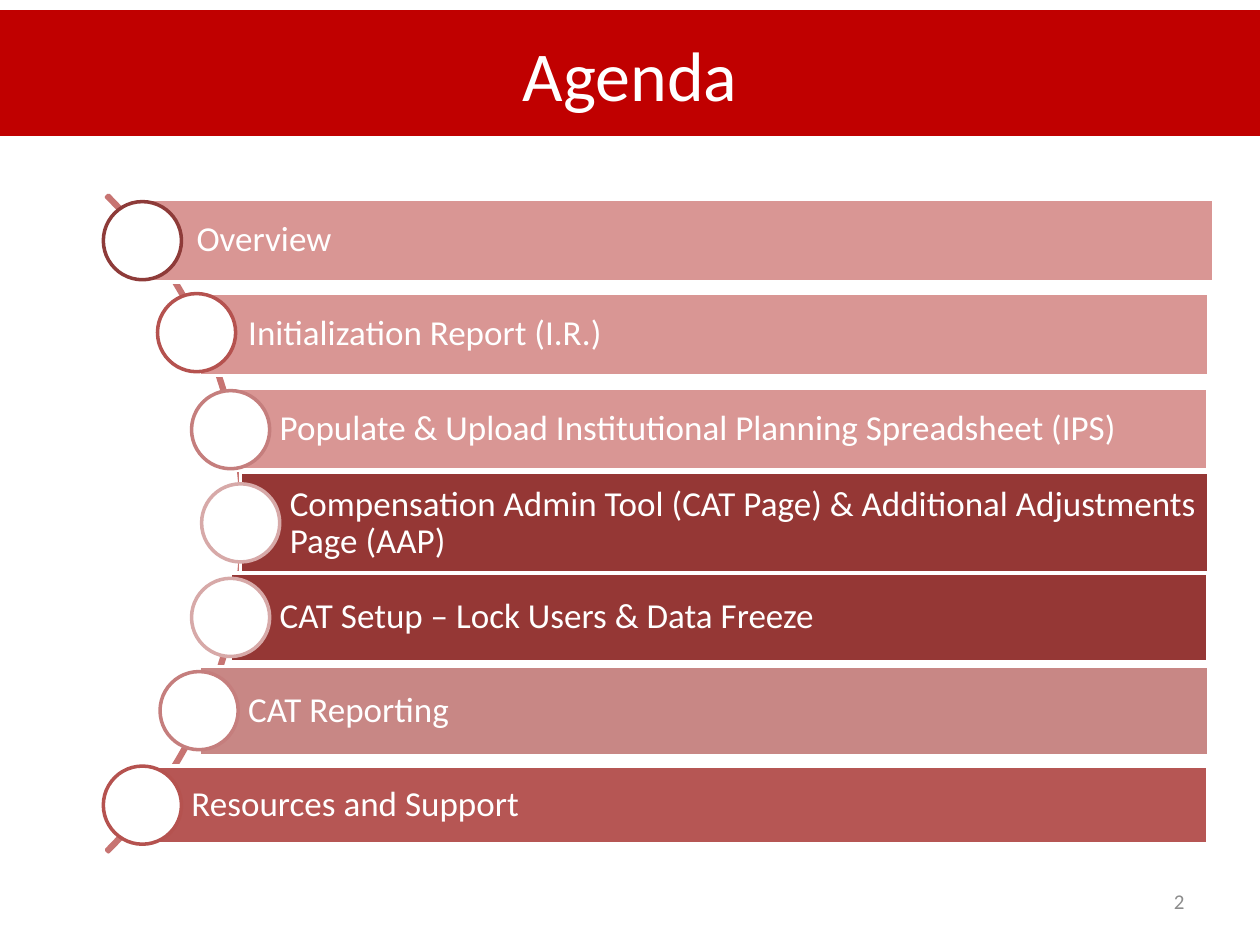
from pptx import Presentation, util as u
from pptx.dml.color import RGBColor
from pptx.enum import shapes, text

HUES = {
    "white": "FFFFFF", "title": "C00000", "arc": "C77472", "page": "8C8C8C",
    "pink": "D99694", "dark": "953735", "rose": "C88785", "brick": "B65654",
    "ring1": "8E3B39", "ring2": "B5524F", "ring3": "C57E7D", "ring4": "D7A9A8",
}
KIND = shapes.MSO_SHAPE
ALIGN = text.PP_ALIGN


def draw(kind, box, fill=None, line=None):
    item = slide.shapes.add_shape(kind, *[u.Inches(n) for n in box])
    item.shadow.inherit = False
    if fill:
        item.fill.solid()
        item.fill.fore_color.rgb = RGBColor.from_string(HUES[fill])
    else:
        item.fill.background()
    if line:
        item.line.color.rgb = RGBColor.from_string(HUES[line])
        item.line.width = u.Pt(2)
    else:
        item.line.fill.background()
    return item


def write(item, words, size, hue, align):
    frame = item.text_frame
    frame.text = words
    frame.word_wrap = True
    frame.vertical_anchor = text.MSO_ANCHOR.MIDDLE
    para = frame.paragraphs[0]
    para.alignment = align
    font = para.runs[0].font
    font.name = "Calibri"
    font.size = u.Pt(size)
    font.color.rgb = RGBColor.from_string(HUES[hue])
    return frame


deck = Presentation()
deck.slide_width, deck.slide_height = u.Inches(10), u.Inches(7.5)
slide = deck.slides.add_slide(deck.slide_layouts[6])

# Title band
band = draw(KIND.RECTANGLE, (0, 0.08, 10, 1), "title")
write(band, "Agenda", 40, "white", ALIGN.CENTER)

# Arc behind the agenda, from 315 to 45 degrees
arc = draw(KIND.BLOCK_ARC, (-5.43, 0.47, 7.37, 7.37), line="arc")
for i, value in enumerate((189, 27, 0.003)):
    arc.adjustments[i] = value

# Agenda rows: words, bar box, bar fill, dot left and top, ring colour
rows = [
    ("Overview", (1.17, 1.58, 8.46, 0.66), "pink", 0.82, 1.6, "ring1"),
    ("Initialization Report (I.R.)",
     (1.58, 2.33, 8.01, 0.65), "pink", 1.25, 2.33, "ring2"),
    ("Populate & Upload Institutional Planning Spreadsheet (IPS)",
     (1.83, 3.08, 7.76, 0.65), "pink", 1.52, 3.1, "ring3"),
    ("Compensation Admin Tool (CAT Page) & Additional Adjustments Page (AAP)",
     (1.91, 3.75, 7.68, 0.81), "dark", 1.6, 3.84, "ring4"),
    ("CAT Setup – Lock Users & Data Freeze",
     (1.83, 4.55, 7.76, 0.7), "dark", 1.52, 4.59, "ring4"),
    ("CAT Reporting", (1.58, 5.29, 8.01, 0.71), "rose", 1.27, 5.33, "ring3"),
    ("Resources and Support",
     (1.13, 6.08, 8.46, 0.62), "brick", 0.82, 6.08, "ring2"),
]
DOT = 0.62
for words, box, fill, left, top, ring in rows:
    bar = draw(KIND.RECTANGLE, box, fill, "white")
    frame = write(bar, words, 20, "white", ALIGN.LEFT)
    frame.margin_left = u.Inches(0.39)
    frame.margin_right = frame.margin_top = frame.margin_bottom = u.Inches(0.06)
    frame.paragraphs[0].line_spacing = 0.9
    draw(KIND.OVAL, (left, top, DOT, DOT), "white", ring)

# Page number
page = slide.shapes.add_textbox(
    u.Inches(7.17), u.Inches(6.95), u.Inches(2.33), u.Inches(0.4))
write(page, "2", 12, "page", ALIGN.RIGHT)

deck.save("out.pptx")
